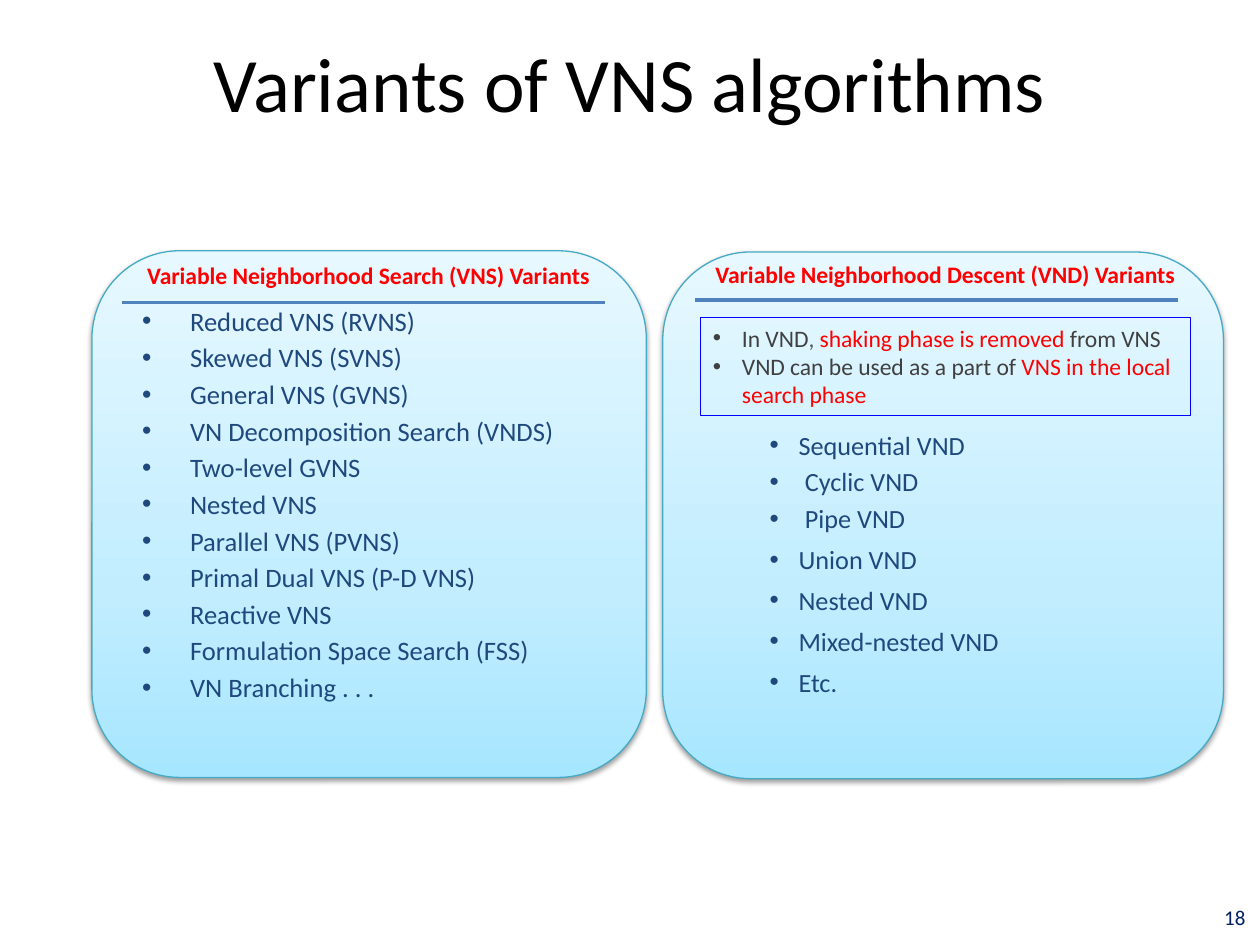
"""Build the slide on variants of VNS algorithms."""
from lxml import etree
from pptx import Presentation
from pptx.dml.color import RGBColor
from pptx.enum.shapes import MSO_CONNECTOR, MSO_SHAPE
from pptx.enum.text import MSO_ANCHOR, PP_ALIGN
from pptx.oxml import parse_xml
from pptx.oxml.ns import qn
from pptx.util import Inches, Pt

LEFT, CENTER = PP_ALIGN.LEFT, PP_ALIGN.CENTER
TOP, MIDDLE = MSO_ANCHOR.TOP, MSO_ANCHOR.MIDDLE
ROUND, RECT = MSO_SHAPE.ROUNDED_RECTANGLE, MSO_SHAPE.RECTANGLE
STRAIGHT = MSO_CONNECTOR.STRAIGHT
NS = 'xmlns:a="http://schemas.openxmlformats.org/drawingml/2006/main"'
COLORS = {
    "black": "000000", "navy": "002060", "red": "FF0000", "gray": "404040",
    "mid": "595959", "text": "1F497D", "rule": "4F81BD", "edge": "46AAC5",
    "blue": "0000FF", "low": "A7E6FF", "soft": "C1EDFF", "high": "E7F8FF",
}

deck = Presentation()
deck.slide_width, deck.slide_height = Inches(10), Inches(7.5)
slide = deck.slides.add_slide(deck.slide_layouts[6])
shapes = slide.shapes


def add_para(frame, runs, size, align=LEFT, bold=False, indent=None, before=0, spacing=None):
    """Add one paragraph of (text, color) runs; indent is (margin, hang)."""
    first = not frame.paragraphs[0].runs
    para = frame.paragraphs[0] if first else frame.add_paragraph()
    para.alignment = align
    if indent:
        props = para._p.get_or_add_pPr()
        props.set("marL", str(Inches(indent[0])))
        props.set("indent", str(-Inches(indent[1])))
        etree.SubElement(props, qn("a:buFont")).set("typeface", "Arial")
        etree.SubElement(props, qn("a:buChar")).set("char", "•")
    if before and not first:
        para.space_before = Pt(before)
    if spacing:
        para.line_spacing = spacing
    for text, color in runs:
        run = para.add_run()
        run.text = text
        run.font.name = "Calibri"
        run.font.size = Pt(size)
        run.font.bold = bold
        run.font.color.rgb = RGBColor.from_string(COLORS[color])


def add_box(left, top, width, height, anchor=TOP, wrap=True):
    """Add an empty text box and return its frame."""
    box = shapes.add_textbox(Inches(left), Inches(top), Inches(width), Inches(height))
    frame = box.text_frame
    frame.word_wrap = wrap
    frame.vertical_anchor = anchor
    return frame


stops = "".join(
    f'<a:gs pos="{pos}000"><a:srgbClr val="{COLORS[name]}"/></a:gs>'
    for pos, name in ((0, "low"), (35, "soft"), (100, "high"))
)
grad = f'<a:gradFill {NS} rotWithShape="1"><a:gsLst>{stops}</a:gsLst><a:lin ang="16200000" scaled="0"/></a:gradFill>'
shade = (
    f'<a:effectLst {NS}><a:outerShdw blurRad="{Pt(3.1)}" dist="{Pt(1.6)}" dir="5400000" rotWithShape="0">'
    '<a:srgbClr val="000000"><a:alpha val="38000"/></a:srgbClr></a:outerShdw></a:effectLst>'
)
for left, top, width in ((0.73, 1.99, 4.4), (5.26, 2, 4.45)):
    panel = shapes.add_shape(ROUND, Inches(left), Inches(top), Inches(width), Inches(4.18))
    panel.line.color.rgb = RGBColor.from_string(COLORS["edge"])
    panel.line.width = Pt(0.75)
    props = panel._element.spPr
    props.find(qn("a:prstGeom")).addnext(parse_xml(grad))
    props.append(parse_xml(shade))

add_para(add_box(0.69, 0, 8.62, 1.3, MIDDLE), [("Variants of VNS algorithms", "black")], 44, CENTER)
add_para(add_box(9.6, 7.08, 0.4, 0.4, MIDDLE), [("18", "navy")], 12, CENTER)

heads = (
    ("Variable Neighborhood Search (VNS) Variants", 1.07, 2.02, 3.76),
    ("Variable Neighborhood Descent (VND) Variants", 5.58, 2.01, 3.89),
)
for text, left, top, width in heads:
    add_para(add_box(left, top, width, 0.56, wrap=False), [(text, "red")], 13.5, bold=True)

for left, top in ((0.97, 2.4), (5.52, 2.38)):
    rule = shapes.add_connector(STRAIGHT, Inches(left), Inches(top), Inches(left + 3.83), Inches(top))
    rule.line.color.rgb = RGBColor.from_string(COLORS["rule"])
    rule.line.width = Pt(2)
    etree.SubElement(rule._element.spPr, qn("a:effectLst"))

note = shapes.add_shape(RECT, Inches(5.56), Inches(2.52), Inches(3.89), Inches(0.78))
note.shadow.inherit = False
note.fill.background()
note.line.color.rgb = RGBColor.from_string(COLORS["blue"])
note.line.width = Pt(0.75)
note.text_frame.word_wrap = True
note.text_frame.vertical_anchor = TOP
facts = (
    [("In VND", "gray"), (", ", "mid"), ("shaking phase is removed ", "red"), ("from VNS", "gray")],
    [("VND can be used as a part of ", "gray"), ("VNS in the local search phase", "red")],
)
for runs in facts:
    add_para(note.text_frame, runs, 13.5, indent=(0.23, 0.23))

search = (
    "Reduced VNS (RVNS)", "Skewed VNS (SVNS)", "General VNS (GVNS)",
    "VN Decomposition Search (VNDS)", "Two-level GVNS", "Nested VNS",
    "Parallel VNS (PVNS)", "Primal Dual VNS (P-D VNS)", "Reactive VNS",
    "Formulation Space Search (FSS)", "VN Branching . . .",
)
frame = add_box(1.03, 2.37, 4.18, 3.57)
for text in search:
    add_para(frame, [(text, "text")], 15.2, indent=(0.38, 0.38), before=2.7)

descent = (
    "Sequential VND", "Cyclic VND", "Pipe VND", "Union VND",
    "Nested VND", "Mixed-nested VND", "Etc.",
)
frame = add_box(5.63, 3.28, 2.97, 2.68)
for text in descent:
    if text in ("Cyclic VND", "Pipe VND"):
        add_para(frame, [(text, "text")], 15, indent=(0.66, 0.28), before=3)
    else:
        add_para(frame, [(text, "text")], 15, indent=(0.61, 0.23), spacing=1.3)

deck.save("out.pptx")
